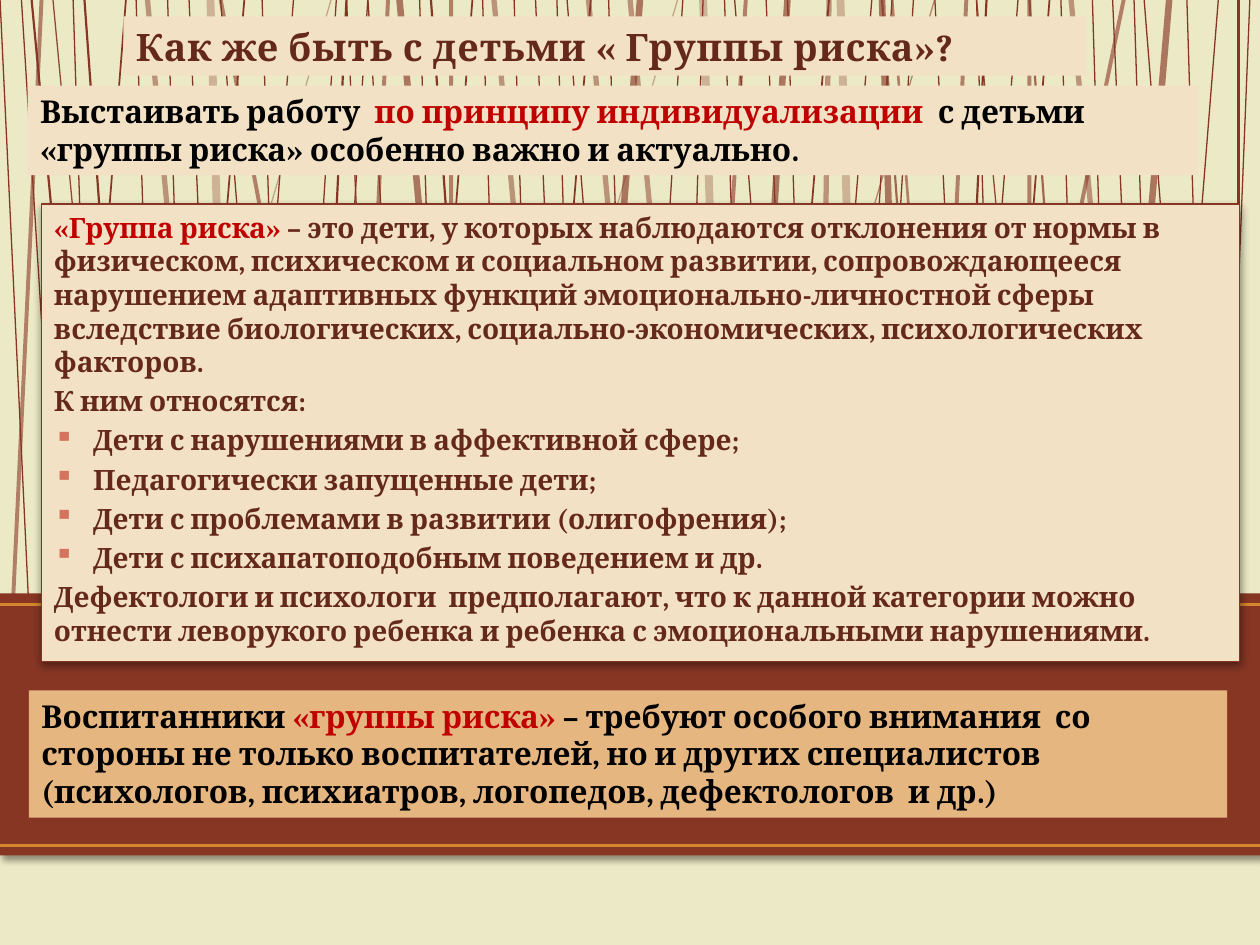
import pptx
import pptx.dml.color
import pptx.enum.shapes
import pptx.enum.text
import pptx.oxml
import pptx.oxml.ns
import pptx.util
from lxml import etree
from pptx.util import Inches

FONT = "Cambria"
BRICK, ORANGE, CREAM, SAND = "873624", "D6862D", "F3E1C6", "E6B681"
BROWN, RED, BLACK = "65291B", "C00000", "000000"
STALK_TOP, STALK_BOTTOM = -0.01, 5.27

# Background stalks: (width in points, opacity in %) -> (top x, bottom x)
STALKS = {
    (0.75, 100): [
        (2.08, 2.25), (1.75, 2.17), (2.33, 1.92), (0, 0.25), (0.17, 0.5), (0.58, 0.75),
        (2.67, 2.34), (2.92, 2.58), (1.5, 1.73), (1.08, 1.25), (1.33, 1.5), (4.83, 5),
        (4.5, 4.92), (2.75, 3), (2.92, 3.25), (4.42, 4.58), (3.33, 3.5), (5.42, 5.09),
        (5.58, 5.42), (4.25, 4.48), (3.83, 4), (4.08, 4.25), (5.83, 6.25), (6.92, 6.5),
        (6.25, 6.42), (7.25, 6.92), (7.08, 6.75), (6.08, 6.31), (5.75, 5.92), (7.42, 7.67),
        (7.75, 7.92), (8.42, 8.58), (8.67, 8.83), (9.42, 9.58), (9.08, 9.5), (9.67, 9.25),
        (9, 9.17), (9.92, 9.71), (8.83, 9.06), (8.08, 7.67)],
    (0.75, 90): [(0.42, 0.92), (7.75, 8.25)],
    (0.75, 56): [(7.42, 5.87)],
    (0.75, 39): [(2.63, 1.08), (5.38, 3.83)],
    (1, 100): [(1, 0.58), (1.94, 1.5), (3.75, 3.33), (4.69, 4.25), (6.58, 6.14), (8.33, 7.92)],
    (1.25, 100): [(0.25, 0.75), (0.67, 1.05), (2.75, 2.5), (3.42, 3.8), (7.83, 7.58),
                  (9.83, 9.83)],
    (1.25, 72): [(8.17, 8.55), (7, 7.39)],
    (1.5, 58): [(7.08, 7.5)],
    (2.25, 58): [(0.33, 0.08), (1.75, 2.75), (3.08, 2.83), (3.58, 3.58), (5.92, 5.58),
                 (7.67, 7.42), (8.17, 8.17), (8.92, 7.83)],
    (3, 47): [(1.17, 1.67), (3.92, 4.42), (4.67, 5.17), (8.5, 9), (6.58, 6.5), (5, 5.5)],
    (3.75, 63): [(5.08, 4.67), (3.17, 3.67), (9.28, 8.83), (7, 7.17), (6.25, 5.92)],
    (4.5, 30): [(1.67, 1.83), (5.58, 5.75), (6.67, 6.83)],
}

# Paragraphs as lists of (text, colour)
TITLE = [[("Как же быть с детьми « Группы риска»?", BROWN)]]
PRINCIPLE = [[
    ("Выстаивать работу  ", BLACK),
    ("по принципу индивидуализации  ", RED),
    ("с детьми «группы риска» особенно важно и актуально.", BLACK)]]
BULLETS = [
    "Дети с нарушениями в аффективной сфере;",
    "Педагогически запущенные дети;",
    "Дети с проблемами в развитии (олигофрения);",
    "Дети с психапатоподобным поведением и др."]
DEFINITION = [
    [("«Группа риска» ", RED),
     ("– это дети, у которых наблюдаются отклонения от нормы в физическом, психическом "
      "и социальном развитии, сопровождающееся нарушением адаптивных функций "
      "эмоционально-личностной сферы вследствие биологических, социально-экономических, "
      "психологических факторов.", BROWN)],
    [("К ним относятся:", BROWN)],
    *[[(text, BROWN)] for text in BULLETS],
    [("Дефектологи и психологи  предполагают, что к данной категории можно отнести "
      "леворукого ребенка и ребенка с эмоциональными нарушениями.", BROWN)]]
CONCLUSION = [[
    ("Воспитанники ", BLACK),
    ("«группы риска» ", RED),
    ("– требуют особого внимания  со стороны не только воспитателей, но и других "
     "специалистов (психологов, психиатров, логопедов, дефектологов  и др.)", BLACK)]]


def rgb(color):
    return pptx.dml.color.RGBColor.from_string(color)


def add_xml(parent, tag, **attrs):
    return etree.SubElement(parent, pptx.oxml.ns.qn(tag), attrs)


def add_line(slide, start, end, color, width, opacity=100):
    line = slide.shapes.add_connector(
        pptx.enum.shapes.MSO_CONNECTOR.STRAIGHT, *map(Inches, start + end))
    line.line.color.rgb = rgb(color)
    line.line.width = pptx.util.Pt(width)
    if opacity < 100:
        clr = line.line.fill._xPr.find(".//" + pptx.oxml.ns.qn("a:srgbClr"))
        add_xml(clr, "a:alpha", val=str(opacity * 1000))
    add_xml(line._element.spPr, "a:effectLst")


def add_panel(slide, box, fill, border=None):
    s = slide.shapes.add_shape(
        pptx.enum.shapes.MSO_SHAPE.RECTANGLE, *map(Inches, box))
    s.shadow.inherit = False
    s.fill.solid()
    s.fill.fore_color.rgb = rgb(fill)
    if border:
        s.line.color.rgb = rgb(border)
        s.line.width = pptx.util.Pt(0.75)
    else:
        s.line.fill.background()
    return s


def set_shadow(s, opacity, blur, dist, angle):
    effects = s._element.spPr.find(pptx.oxml.ns.qn("a:effectLst"))
    shadow = add_xml(effects, "a:outerShdw", blurRad=str(pptx.util.Pt(blur)),
                     dist=str(pptx.util.Pt(dist)), dir=str(angle * 60000),
                     algn="ctr", rotWithShape="0")
    add_xml(add_xml(shadow, "a:srgbClr", val=BLACK), "a:alpha", val=str(opacity * 1000))


def set_text(s, paragraphs, size, anchor=pptx.enum.text.MSO_ANCHOR.TOP, space=0):
    tf = s.text_frame
    tf.word_wrap = True
    tf.vertical_anchor = anchor
    for i, runs in enumerate(paragraphs):
        p = tf.paragraphs[0] if i == 0 else tf.add_paragraph()
        p.alignment = pptx.enum.text.PP_ALIGN.LEFT
        p.space_before = pptx.util.Pt(space)
        for text, color in runs:
            r = p.add_run()
            r.text = text
            r.font.name = FONT
            r.font.size = pptx.util.Pt(size)
            r.font.bold = True
            r.font.color.rgb = rgb(color)


def set_bullet(p, color):
    pPr = p._p.get_or_add_pPr()
    indent = Inches(0.31)
    pPr.set("marL", str(indent))
    pPr.set("indent", str(-indent))
    add_xml(add_xml(pPr, "a:buClr"), "a:srgbClr", val=color)
    add_xml(pPr, "a:buChar", char="▪")


def add_backdrop(slide):
    slide.background.fill.solid()
    slide.background.fill.fore_color.rgb = rgb("ECE9C6")
    for (width, opacity), stalks in STALKS.items():
        for top, bottom in stalks:
            add_line(slide, (top, STALK_TOP), (bottom, STALK_BOTTOM), BRICK, width, opacity)
    band = add_panel(slide, (0, 4.71, 10, 2.08), BRICK)
    set_shadow(band, 40, 4, 3, 45)
    for y in (4.8, 6.71):
        add_line(slide, (0, y), (10, y), ORANGE, 1.5)


def main():
    prs = pptx.Presentation()
    prs.slide_width, prs.slide_height = Inches(10), Inches(7.5)
    slide = prs.slides.add_slide(prs.slide_layouts[6])
    add_backdrop(slide)

    # Definition with the list of groups
    s = add_panel(slide, (0.33, 1.62, 9.51, 3.63), CREAM, BRICK)
    set_shadow(s, 43, 5, 2, 90)
    set_text(s, DEFINITION, 16, space=3.2)
    for p in s.text_frame.paragraphs:
        if p.text in BULLETS:
            set_bullet(p, "D4745E")

    # Title, slightly letter-spaced
    s = add_panel(slide, (0.98, 0.13, 7.64, 0.47), CREAM)
    set_text(s, TITLE, 21.6, pptx.enum.text.MSO_ANCHOR.BOTTOM)
    s.text_frame.paragraphs[0].runs[0].font._element.set("spc", "50")

    # Statements above and below the definition
    s = add_panel(slide, (0.22, 0.68, 9.29, 0.71), CREAM)
    set_text(s, PRINCIPLE, 18)
    s = add_panel(slide, (0.23, 5.48, 9.51, 1.01), SAND)
    set_text(s, CONCLUSION, 18)

    prs.save("out.pptx")


if __name__ == "__main__":
    main()
